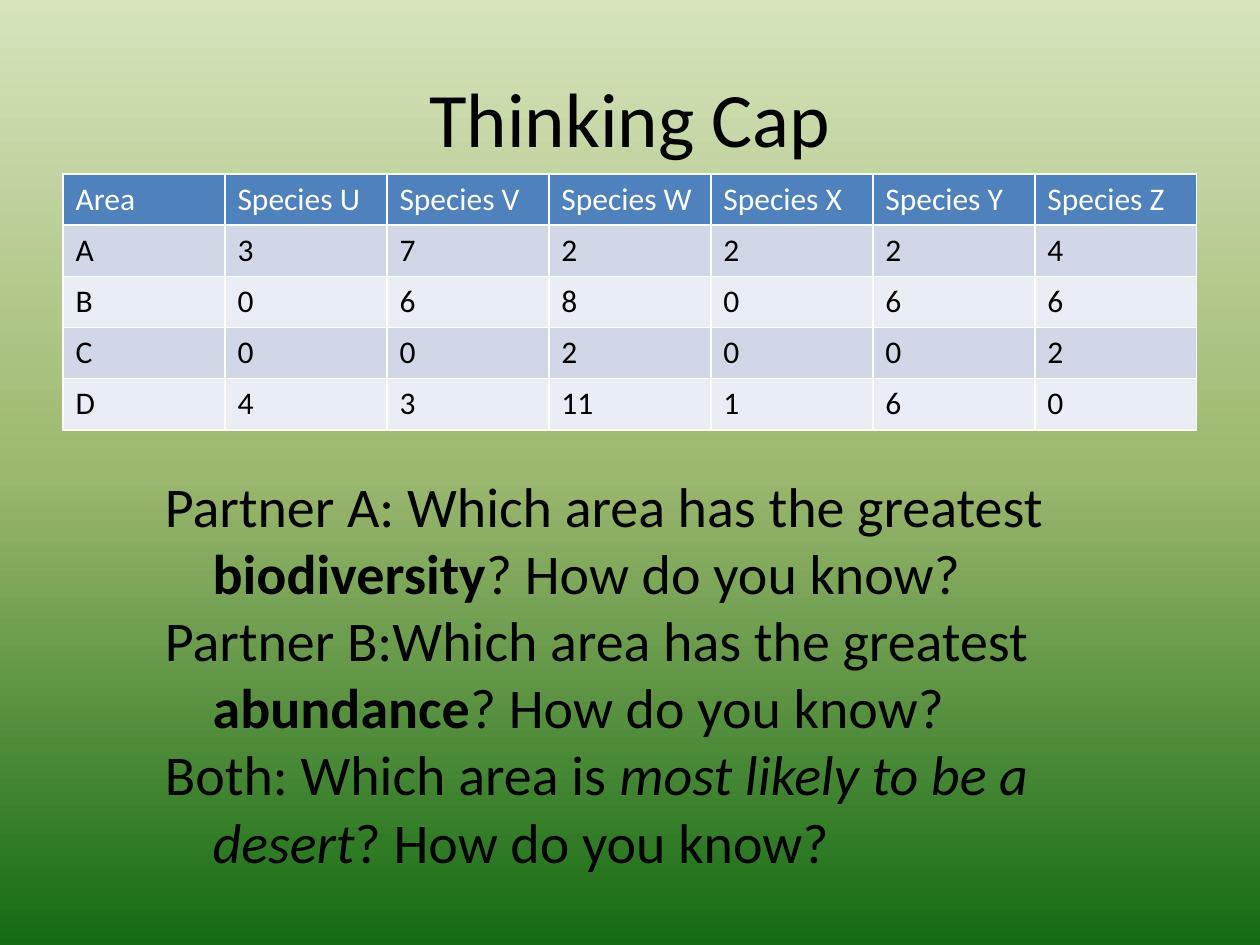
from copy import deepcopy
from dataclasses import dataclass

from pptx import Presentation
from pptx import util as u
from pptx.dml.color import RGBColor
from pptx.enum import text
from pptx.oxml.ns import qn

WIDTH, HEIGHT = u.Inches(10), u.Inches(7.5)
FONT = "Calibri"
BLACK = RGBColor(0x00, 0x00, 0x00)
WHITE = RGBColor(0xFF, 0xFF, 0xFF)
HEADER_BLUE = RGBColor(0x4F, 0x81, 0xBD)
BANDS = (RGBColor(0xD0, 0xD8, 0xE8), RGBColor(0xE9, 0xED, 0xF4))
GRADIENT = (
    (0, RGBColor(0xD7, 0xE4, 0xBD)),
    (0.5, RGBColor(0x9C, 0xB8, 0x6E)),
    (1, RGBColor(0x15, 0x6B, 0x13)),
)

SPECIES_COUNTS = {
    "A": (3, 7, 2, 2, 2, 4),
    "B": (0, 6, 8, 0, 6, 6),
    "C": (0, 0, 2, 0, 0, 2),
    "D": (4, 3, 11, 1, 6, 0),
}


@dataclass
class Frame:
    """A place on the slide, in shares of its width and height."""
    left: float
    top: float
    width: float
    height: float

    def lengths(self) -> tuple:
        return (u.Emu(int(self.left * WIDTH)), u.Emu(int(self.top * HEIGHT)),
                u.Emu(int(self.width * WIDTH)), u.Emu(int(self.height * HEIGHT)))


@dataclass
class Question:
    opening: str
    key_words: str
    emphasis: str
    ending: str = "? How do you know?"


QUESTIONS = (
    Question("Partner A: Which area has the greatest ", "biodiversity", "bold"),
    Question("Partner B:Which area has the greatest ", "abundance", "bold"),
    Question("Both: Which area is ", "most likely to be a desert", "italic"),
)

TITLE_FRAME = Frame(0.05, 0.04, 0.9, 0.167)
TABLE_FRAME = Frame(0.05, 0.184, 0.9, 0.271)
QUESTION_FRAME = Frame(0.121, 0.492, 0.759, 0.444)


def add_span(para, words: str, size: int, color: RGBColor = BLACK, **extra) -> None:
    span = para.add_run()
    span.text = words
    formats = {"name": FONT, "size": u.Pt(size), "bold": False, "italic": False}
    for name, value in (formats | extra).items():
        setattr(span.font, name, value)
    span.font.color.rgb = color


def paint_background(page) -> None:
    fill = page.background.fill
    fill.gradient()
    fill.gradient_angle = 270
    stop_list = next(page.element.iter(qn("a:gsLst")))
    stop_list.append(deepcopy(stop_list[0]))
    for stop, (position, color) in zip(fill.gradient_stops, GRADIENT):
        stop.position = position
        stop.color.rgb = color


def add_title(page, words: str) -> None:
    title = page.shapes.title
    title.left, title.top, title.width, title.height = TITLE_FRAME.lengths()
    title.text_frame.vertical_anchor = text.MSO_ANCHOR.MIDDLE
    para = title.text_frame.paragraphs[0]
    para.alignment = text.PP_ALIGN.CENTER
    add_span(para, words, 44)


def add_species_table(page) -> None:
    header = ["Area"] + [f"Species {letter}" for letter in "UVWXYZ"]
    rows = [header] + [[area, *counts] for area, counts in SPECIES_COUNTS.items()]
    table = page.shapes.add_table(len(rows), len(header), *TABLE_FRAME.lengths()).table
    for r, row in enumerate(rows):
        fill_color = BANDS[(r - 1) % 2] if r else HEADER_BLUE
        for c, value in enumerate(row):
            cell = table.cell(r, c)
            cell.fill.solid()
            cell.fill.fore_color.rgb = fill_color
            add_span(cell.text_frame.paragraphs[0], str(value), 18, BLACK if r else WHITE)


def add_questions(page) -> None:
    box = page.shapes.add_textbox(*QUESTION_FRAME.lengths())
    frame = box.text_frame
    frame.word_wrap = True
    for i, question in enumerate(QUESTIONS):
        para = frame.add_paragraph() if i else frame.paragraphs[0]
        # Hanging indent
        indent = u.Inches(0.38)
        properties = para._p.get_or_add_pPr()
        properties.set("marL", str(indent))
        properties.set("indent", str(-indent))
        add_span(para, question.opening, 32)
        add_span(para, question.key_words, 32, **{question.emphasis: True})
        add_span(para, question.ending, 32)


def main() -> None:
    deck = Presentation()
    deck.slide_width, deck.slide_height = WIDTH, HEIGHT
    page = deck.slides.add_slide(deck.slide_layouts.get_by_name("Title Only"))
    paint_background(page)
    add_title(page, "Thinking Cap")
    add_species_table(page)
    add_questions(page)
    deck.save("out.pptx")


if __name__ == "__main__":
    main()
